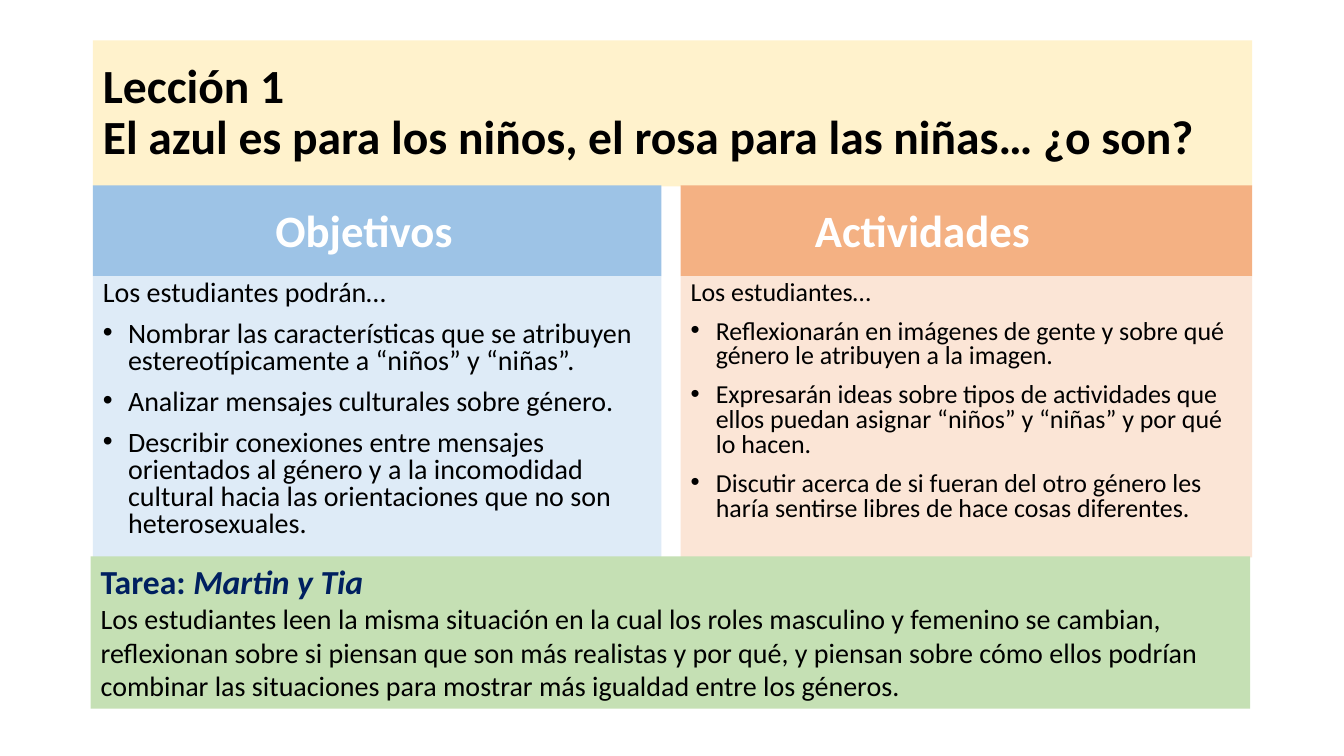
from lxml import etree
from pptx import Presentation
from pptx import util as u
from pptx.dml.color import RGBColor
from pptx.enum import shapes, text
from pptx.oxml.ns import qn

# Content
TITLE = "Lección 1\vEl azul es para los niños, el rosa para las niñas… ¿o son?"
COLUMNS = [
    dict(heading="Objetivos", intro="Los estudiantes podrán…", size=20,
         left=0.92, width=5.64, inset_right=0.36, dark="9DC3E6", light="DEEBF7",
         points=[
             "Nombrar las características que se atribuyen estereotípicamente a “niños” y “niñas”.",
             "Analizar mensajes culturales sobre género.",
             "Describir conexiones entre mensajes orientados al género y a la incomodidad "
             "cultural hacia las orientaciones que no son heterosexuales.",
         ]),
    dict(heading="Actividades", intro="Los estudiantes…", size=18.5,
         left=6.75, width=5.67, inset_right=0.97, dark="F4B183", light="FBE5D6",
         points=[
             "Reflexionarán en imágenes de gente y sobre qué género le atribuyen a la imagen.",
             "Expresarán ideas sobre tipos de actividades que ellos puedan asignar “niños” "
             "y “niñas” y por qué lo hacen.",
             "Discutir acerca de si fueran del otro género les haría sentirse libres de hace "
             "cosas diferentes.",
         ]),
]
HOMEWORK_LABEL, HOMEWORK_NAME = "Tarea: ", "Martin y Tia"
HOMEWORK = ("Los estudiantes leen la misma situación en la cual los roles masculino y femenino "
            "se cambian, reflexionan sobre si piensan que son más realistas y por qué, y piensan "
            "sobre cómo ellos podrían combinar las situaciones para mostrar más igualdad entre "
            "los géneros.")

# Rows of the grid: top, height
TITLE_ROW, HEADING_ROW, LIST_ROW, HOMEWORK_ROW = (
    (0.4, 1.45), (1.84, 0.9), (2.74, 2.79), (5.52, 1.51))
FULL_WIDTH = 11.5
INDENT = 0.25


def color(value):
    return RGBColor.from_string(value)


def format_box(shape, left, row, width, fill, anchor, right=0.1, bottom=0.05):
    shape.left, shape.width = u.Inches(left), u.Inches(width)
    shape.top, shape.height = (u.Inches(length) for length in row)
    shape.fill.solid()
    shape.fill.fore_color.rgb = color(fill)
    frame = shape.text_frame
    frame.word_wrap = True
    frame.auto_size = text.MSO_AUTO_SIZE.NONE
    frame.vertical_anchor = anchor
    frame.margin_left, frame.margin_right = u.Inches(0.1), u.Inches(right)
    frame.margin_top, frame.margin_bottom = u.Inches(0.05), u.Inches(bottom)
    return frame


def format_paragraph(paragraph, size, ink="000000", bold=False, spacing=1.0, before=0,
                     align=text.PP_ALIGN.LEFT):
    paragraph.alignment = align
    paragraph.line_spacing = spacing
    paragraph.space_before = u.Pt(before)
    font = paragraph.font
    font.name, font.size, font.bold = "Calibri", u.Pt(size), bold
    font.color.rgb = color(ink)


def set_bullet(paragraph, bulleted):
    properties = paragraph._p.get_or_add_pPr()
    indent = u.Inches(INDENT) if bulleted else 0
    properties.set("marL", str(indent))
    properties.set("indent", str(-indent))
    bullet = etree.Element(qn("a:buChar" if bulleted else "a:buNone"))
    if bulleted:
        bullet.set("char", "•")
    properties.find(qn("a:defRPr")).addprevious(bullet)


presentation = Presentation()
presentation.slide_width, presentation.slide_height = u.Inches(13.33), u.Inches(7.5)
slide = presentation.slides.add_slide(presentation.slide_layouts.get_by_name("Comparison"))
title, *bodies = list(slide.placeholders)[:5]

# Title band
frame = format_box(title, COLUMNS[0]["left"], TITLE_ROW, FULL_WIDTH, "FFF2CC",
                   text.MSO_ANCHOR.MIDDLE)
frame.text = TITLE
format_paragraph(frame.paragraphs[0], 34, bold=True, spacing=0.9)

# Two columns, each a heading above a list
for column, heading, body in zip(COLUMNS, bodies[::2], bodies[1::2]):
    frame = format_box(heading, column["left"], HEADING_ROW, column["width"], column["dark"],
                       text.MSO_ANCHOR.BOTTOM, right=column["inset_right"], bottom=0.2)
    frame.text = column["heading"]
    format_paragraph(frame.paragraphs[0], 32, "FFFFFF", True, align=text.PP_ALIGN.CENTER)
    set_bullet(frame.paragraphs[0], False)

    frame = format_box(body, column["left"], LIST_ROW, column["width"], column["light"],
                       text.MSO_ANCHOR.TOP)
    frame.text = "\n".join([column["intro"], *column["points"]])
    for number, paragraph in enumerate(frame.paragraphs):
        format_paragraph(paragraph, column["size"], spacing=0.8, before=10)
        set_bullet(paragraph, number > 0)

# Homework band
homework = slide.shapes.add_shape(shapes.MSO_SHAPE.RECTANGLE, 0, 0, 0, 0)
homework.shadow.inherit = False
homework.line.fill.background()
frame = format_box(homework, 0.9, HOMEWORK_ROW, FULL_WIDTH, "C5E0B4", text.MSO_ANCHOR.TOP)
label = frame.paragraphs[0]
label.add_run().text = HOMEWORK_LABEL
name = label.add_run()
name.text = HOMEWORK_NAME
name.font.italic = True
format_paragraph(label, 24, "002060", True)
task = frame.add_paragraph()
task.text = HOMEWORK
format_paragraph(task, 20)

# Unused date, footer and number placeholders
for placeholder in list(slide.placeholders):
    if not placeholder.text_frame.text:
        placeholder.element.getparent().remove(placeholder.element)

presentation.save("out.pptx")
